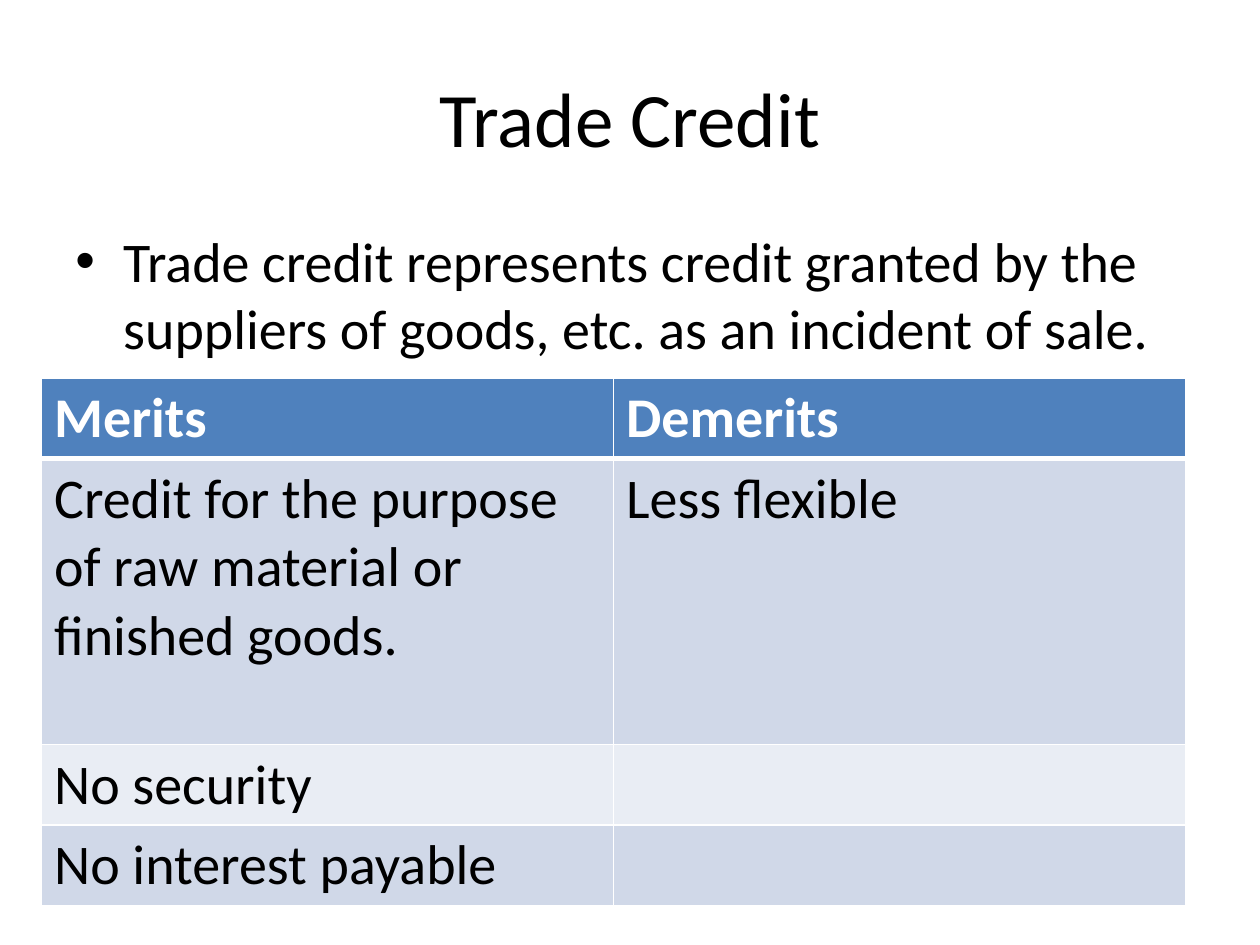
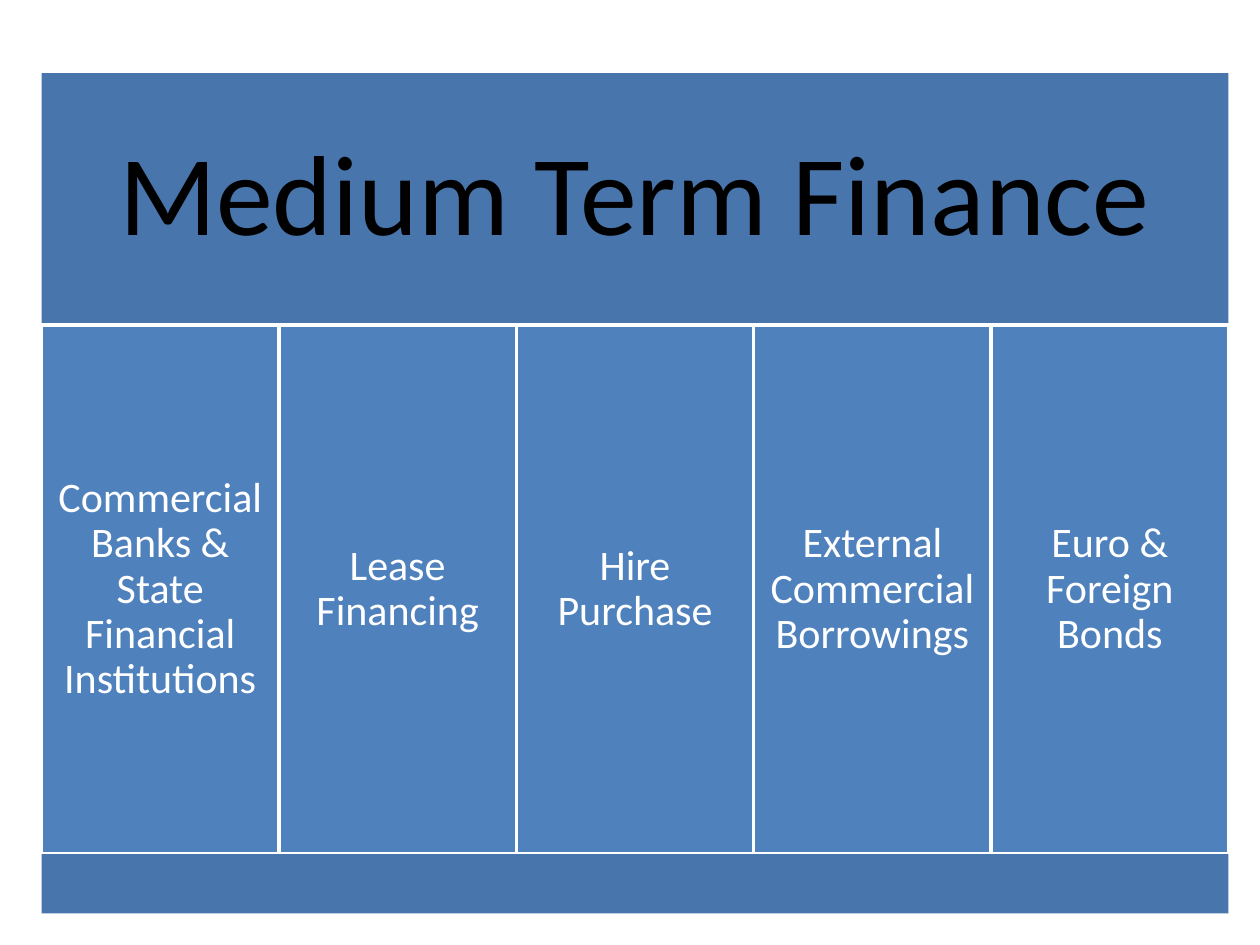
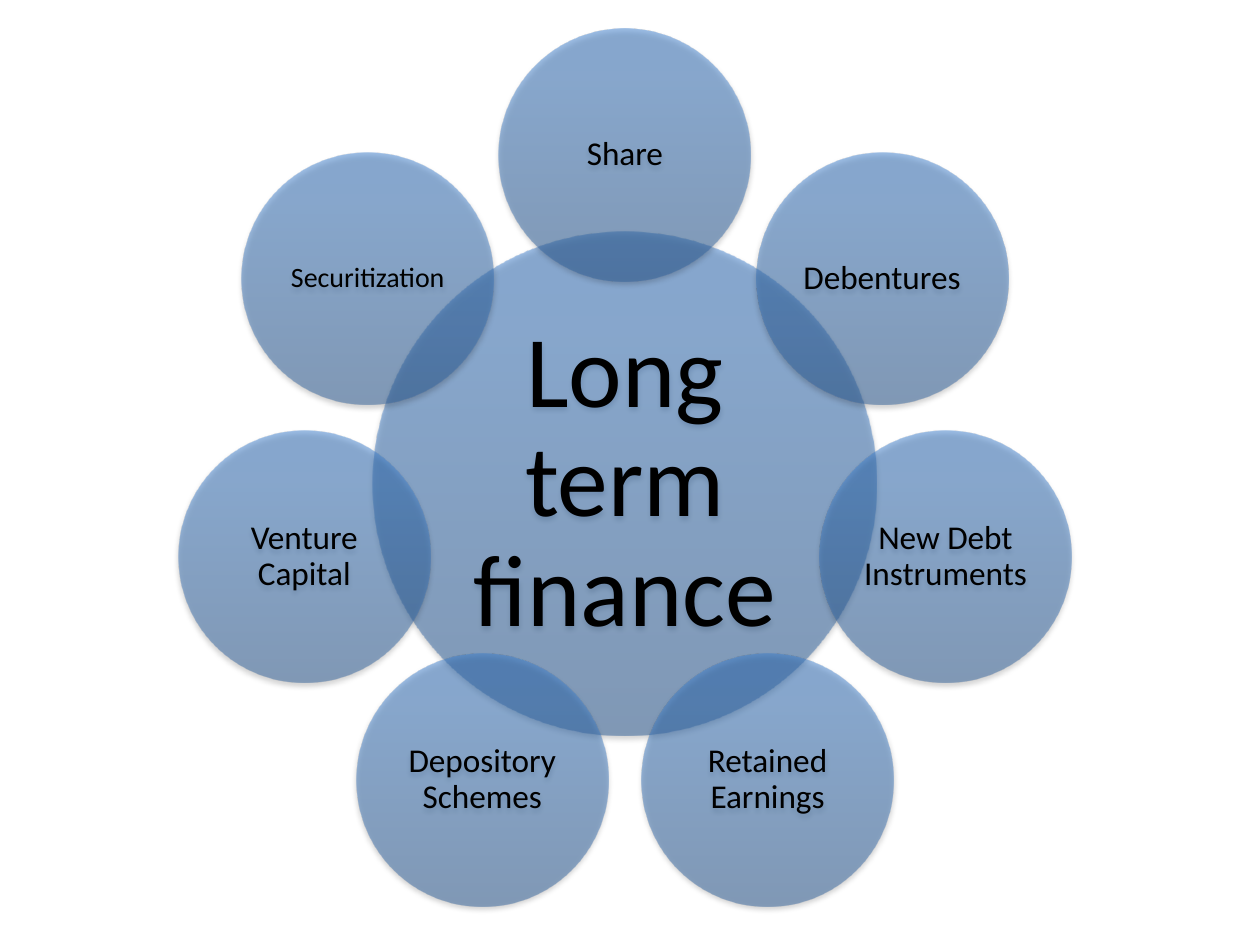
from dataclasses import dataclass
from math import cos, pi, sin

from lxml.etree import SubElement
from pptx import Presentation
from pptx.dml.color import RGBColor
from pptx.enum.shapes import MSO_SHAPE
from pptx.enum.text import MSO_ANCHOR, PP_ALIGN
from pptx.oxml import parse_xml
from pptx.oxml.ns import nsdecls, qn
from pptx.util import Inches, Pt


@dataclass(frozen=True)
class Theme:
    font: str = "Calibri"
    black: str = "000000"
    white: str = "FFFFFF"
    blue: str = "4F81BD"
    dark_blue: str = "4875AC"
    stripes: tuple = ("D0D8E8", "E9EDF4")
    gradient: tuple = ((0, "2F5F99"), (80, "3D7CC7"), (100, "3A7CCB"))
    title: int = 44
    body: int = 32
    banner: int = 65
    panel: int = 24
    hub: int = 58
    petal: int = 19
    small_petal: int = 16


THEME = Theme()


def write(frame, text, size, color, bold=False, align=PP_ALIGN.LEFT,
          anchor=MSO_ANCHOR.TOP, margin=None, line_spacing=None):
    frame.text = text
    frame.word_wrap = True
    frame.vertical_anchor = anchor
    if margin is not None:
        frame.margin_left = frame.margin_right = Inches(margin)
        frame.margin_top = frame.margin_bottom = Inches(margin)
    for para in frame.paragraphs:
        para.alignment = align
        para.line_spacing = line_spacing
        for span in para.runs:
            span.font.name = THEME.font
            span.font.size = Pt(size)
            span.font.bold = bold
            span.font.color.rgb = RGBColor.from_string(color)


def write_centred(frame, text, size, color, margin):
    write(frame, text, size, color, align=PP_ALIGN.CENTER,
          anchor=MSO_ANCHOR.MIDDLE, margin=margin, line_spacing=0.9)


def add_title(slide, text):
    box = slide.shapes.add_textbox(Inches(0.5), Inches(0.3), Inches(9), Inches(1.25))
    write(box.text_frame, text, THEME.title, THEME.black,
          align=PP_ALIGN.CENTER, anchor=MSO_ANCHOR.MIDDLE)


def add_bullet(slide, text):
    box = slide.shapes.add_textbox(Inches(0.5), Inches(1.75), Inches(9), Inches(4.95))
    write(box.text_frame, text, THEME.body, THEME.black)
    properties = box.text_frame.paragraphs[0]._p.get_or_add_pPr()
    properties.set("marL", str(Inches(0.38)))
    properties.set("indent", str(Inches(-0.38)))
    SubElement(properties, qn("a:buFont"), typeface="Arial")
    SubElement(properties, qn("a:buChar"), char="•")


def set_borders(cell, top, bottom):
    """Draw white borders; top and bottom are widths in points."""
    properties = cell._tc.get_or_add_tcPr()
    widths = {"lnL": 1, "lnR": 1, "lnT": top, "lnB": bottom}
    for position, (side, width) in enumerate(widths.items()):
        properties.insert(position, parse_xml(
            f'<a:{side} {nsdecls("a")} w="{Pt(width)}"><a:solidFill>'
            f'<a:srgbClr val="{THEME.white}"/></a:solidFill></a:{side}>'))


def add_comparison(slide, rows, heights):
    frame = slide.shapes.add_table(len(rows), 2, Inches(0.33), Inches(3),
                                   Inches(9.08), Inches(sum(heights)))
    table = frame.table
    for index, (texts, height) in enumerate(zip(rows, heights)):
        table.rows[index].height = Inches(height)
        header = index == 0
        fill = THEME.blue if header else THEME.stripes[(index - 1) % 2]
        color = THEME.white if header else THEME.black
        for column, text in enumerate(texts):
            cell = table.cell(index, column)
            cell.fill.solid()
            cell.fill.fore_color.rgb = RGBColor.from_string(fill)
            write(cell.text_frame, text, THEME.body, color, bold=header)
            set_borders(cell, top=3 if index == 1 else 1, bottom=3 if header else 1)


def add_block(slide, left, top, width, height, fill, outlined=False):
    block = slide.shapes.add_shape(MSO_SHAPE.RECTANGLE, Inches(left), Inches(top),
                                   Inches(width), Inches(height))
    block.shadow.inherit = False
    block.fill.solid()
    block.fill.fore_color.rgb = RGBColor.from_string(fill)
    if outlined:
        block.line.color.rgb = RGBColor.from_string(THEME.white)
        block.line.width = Pt(2)
    else:
        block.line.fill.background()
    return block


def add_circle(slide, center_x, center_y, radius, text, size, margin):
    circle = slide.shapes.add_shape(
        MSO_SHAPE.OVAL, Inches(center_x - radius), Inches(center_y - radius),
        Inches(2 * radius), Inches(2 * radius))
    circle.line.fill.background()
    stops = "".join(
        f'<a:gs pos="{place * 1000}"><a:srgbClr val="{color}">'
        f'<a:alpha val="50000"/></a:srgbClr></a:gs>'
        for place, color in THEME.gradient)
    outline = circle._element.spPr.find(qn("a:ln"))
    outline.addprevious(parse_xml(
        f'<a:gradFill {nsdecls("a")} rotWithShape="1"><a:gsLst>{stops}</a:gsLst>'
        f'<a:lin ang="16200000" scaled="0"/></a:gradFill>'))
    outline.addnext(parse_xml(
        f'<a:effectLst {nsdecls("a")}><a:outerShdw blurRad="{Pt(3.1)}" '
        f'dist="{Pt(1.8)}" dir="5400000" rotWithShape="0">'
        f'<a:srgbClr val="{THEME.black}"><a:alpha val="35000"/></a:srgbClr>'
        f'</a:outerShdw></a:effectLst>'))
    write_centred(circle.text_frame, text, size, THEME.black, margin)


def build_trade_credit(slide):
    add_title(slide, "Trade Credit")
    add_bullet(slide, "Trade credit represents credit granted by the suppliers "
                      "of goods, etc. as an incident of sale.")
    add_comparison(slide, [
        ("Merits", "Demerits"),
        ("Credit for the purpose of raw material or finished goods.", "Less flexible"),
        ("No security", ""),
        ("No interest payable", ""),
    ], heights=(0.64, 2.27, 0.64, 0.64))


def build_medium_term(slide):
    left, width = 0.33, 9.42
    banner = add_block(slide, left, 0.58, width, 2, THEME.dark_blue)
    write_centred(banner.text_frame, "Medium Term Finance", THEME.banner,
                  THEME.black, margin=0.27)
    sources = ("Commercial Banks & State Financial Institutions", "Lease Financing",
               "Hire Purchase", "External Commercial Borrowings",
               "Euro & Foreign Bonds")
    step = width / len(sources)
    for index, source in enumerate(sources):
        panel = add_block(slide, left + index * step, 2.58, step, 4.2,
                          THEME.blue, outlined=True)
        write_centred(panel.text_frame, source, THEME.panel, THEME.white, margin=0.1)
    add_block(slide, left, 6.78, width, 0.47, THEME.dark_blue)


def build_long_term(slide):
    center_x, center_y, orbit = 4.96, 3.84, 2.61
    add_circle(slide, center_x, center_y, 2, "Long term finance", THEME.hub, 0.08)
    sources = ("Share", "Debentures", "New Debt Instruments", "Retained Earnings",
               "Depository Schemes", "Venture Capital", "Securitization")
    for index, source in enumerate(sources):
        angle = 2 * pi * index / len(sources)
        size = THEME.small_petal if source == "Securitization" else THEME.petal
        add_circle(slide, center_x + orbit * sin(angle),
                   center_y - orbit * cos(angle), 1, source, size, 0.03)


def main():
    deck = Presentation()
    deck.slide_width, deck.slide_height = Inches(10), Inches(7.5)
    for build in (build_trade_credit, build_medium_term, build_long_term):
        build(deck.slides.add_slide(deck.slide_layouts[6]))
    deck.save("out.pptx")


if __name__ == "__main__":
    main()
